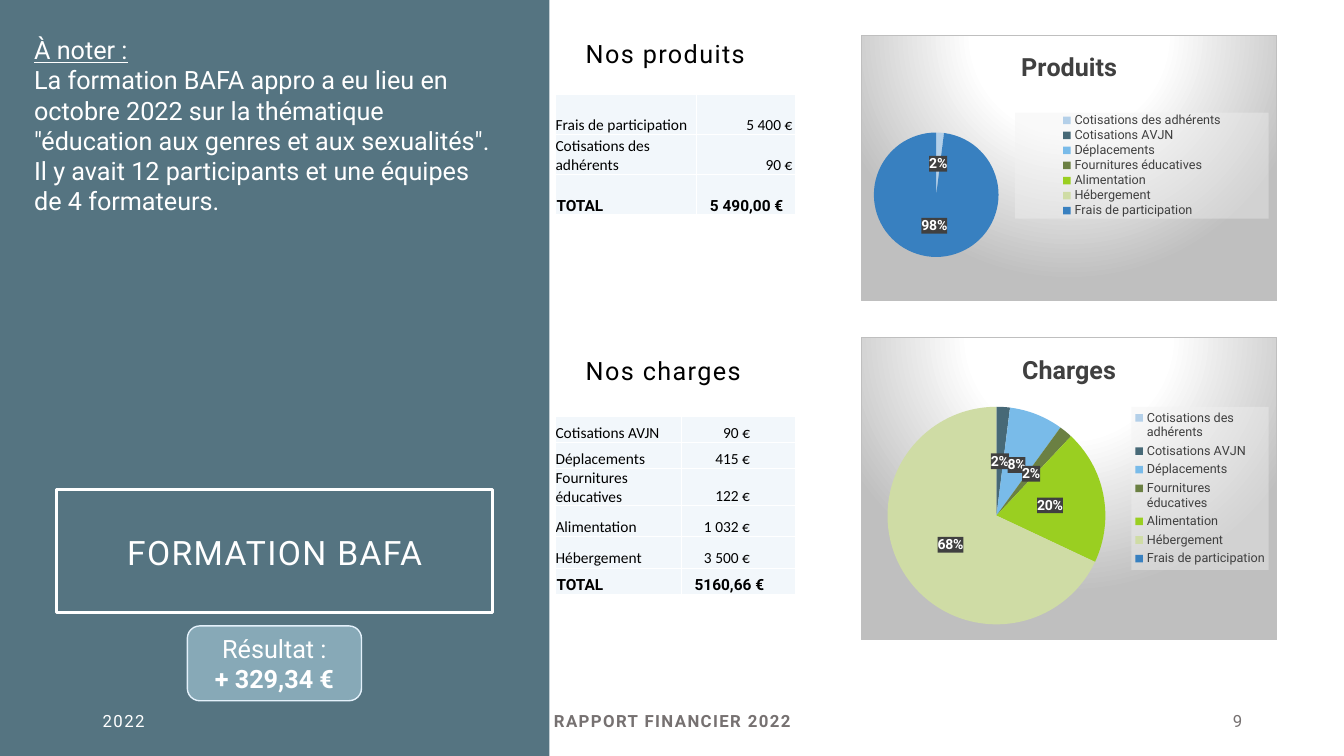
from lxml import etree
from pptx import Presentation
from pptx import util as u
from pptx.chart.data import CategoryChartData
from pptx.dml.color import RGBColor
from pptx.enum import chart as ch, shapes, text
from pptx.oxml import parse_xml
from pptx.oxml.ns import nsdecls, qn

WHITE = RGBColor(0xFF, 0xFF, 0xFF)
BLACK = RGBColor(0, 0, 0)
DARK = RGBColor(0x40, 0x40, 0x40)
GREY = RGBColor(0x76, 0x71, 0x71)
SLATE = RGBColor(0x47, 0x69, 0x77)
MIST = RGBColor(0x87, 0xA9, 0xB7)
PALE = RGBColor(0xE4, 0xF1, 0xFB)
CELL = RGBColor(0xF2, 0xF7, 0xFB)
SLICES = [RGBColor.from_string(c) for c in (
    "B4D0E9", "476977", "79BBE9", "6B8043", "9ACF21", "CFDCA5", "3880C0")]
CATS = ["Cotisations des adhérents", "Cotisations AVJN", "Déplacements",
        "Fournitures éducatives", "Alimentation", "Hébergement",
        "Frais de participation"]
LEFT, MID, RIGHT = text.PP_ALIGN.LEFT, text.PP_ALIGN.CENTER, text.PP_ALIGN.RIGHT
CARD = """<c:spPr %s><a:gradFill><a:gsLst>
<a:gs pos="0"><a:srgbClr val="FFFFFF"/></a:gs>
<a:gs pos="39000"><a:srgbClr val="FFFFFF"/></a:gs>
<a:gs pos="100000"><a:srgbClr val="BFBFBF"/></a:gs></a:gsLst>
<a:path path="circle"><a:fillToRect l="50000" t="-80000" r="50000" b="180000"/></a:path>
</a:gradFill><a:ln w="9525"><a:solidFill><a:srgbClr val="BFBFBF"/></a:solidFill></a:ln>
</c:spPr>""" % nsdecls("c", "a")


def part(box, x, y, w, h):
    return (box[0] + x * box[2], box[1] + y * box[3], w * box[2], h * box[3])


def size(box):
    return [u.Inches(v) for v in box]


def style(font, pts, color, bold=False, face="Roboto"):
    font.size, font.name, font.bold = u.Pt(pts), face, bold
    font.color.rgb = color


def write(par, words, pts, color, bold=False, face="Roboto", gap=0, line=False):
    run = par.add_run()
    run.text = words
    style(run.font, pts, color, bold, face)
    if line:
        run.font.underline = True
    if gap:
        run._r.get_or_add_rPr().set("spc", str(gap))


def label(slide, box, words, pts, color, align=LEFT, bold=False, space=1):
    frame = slide.shapes.add_textbox(*size(box)).text_frame
    frame.word_wrap = True
    frame.vertical_anchor = text.MSO_ANCHOR.MIDDLE
    par = frame.paragraphs[0]
    par.alignment, par.line_spacing = align, space
    write(par, words, pts, color, bold, gap=100)


def block(slide, kind, box, fill=None, line=None, width=1):
    shape = slide.shapes.add_shape(kind, *size(box))
    shape.shadow.inherit = False
    if fill is None:
        shape.fill.background()
    else:
        shape.fill.solid()
        shape.fill.fore_color.rgb = fill
    if line is None:
        shape.line.fill.background()
    else:
        shape.line.color.rgb, shape.line.width = line, u.Pt(width)
    shape.text_frame.word_wrap = True
    shape.text_frame.vertical_anchor = text.MSO_ANCHOR.MIDDLE
    return shape


def fade(parent, share):
    color = next(parent.iter(qn("a:srgbClr")))
    etree.SubElement(color, qn("a:alpha")).set("val", str(share * 1000))


def panel(slide, box):
    rect = shapes.MSO_SHAPE.RECTANGLE
    back = block(slide, rect, box, SLATE)
    fade(back._element.spPr, 92)
    frame = back.text_frame
    frame.margin_top = u.Inches(3.55)
    par = frame.paragraphs[0]
    par.alignment, par.line_spacing = MID, 0.9
    write(par, "FORMATION BAFA", 24, WHITE, gap=100)
    block(slide, rect, part(box, 0.103, 0.647, 0.793, 0.163), line=WHITE, width=2.25)

    note = slide.shapes.add_textbox(*size(part(box, 0.044, 0.039, 0.87, 0.296))).text_frame
    note.word_wrap = True
    write(note.paragraphs[0], "À noter :", 18, WHITE, line=True)
    write(note.add_paragraph(), "La formation BAFA appro a eu lieu en octobre 2022 sur la "
          "thématique \"éducation aux genres et aux sexualités\". Il y avait 12 "
          "participants et une équipes de 4 formateurs.", 18, WHITE)

    badge = block(slide, shapes.MSO_SHAPE.ROUNDED_RECTANGLE,
                  part(box, 0.341, 0.828, 0.317, 0.099), MIST, PALE).text_frame
    first, last = badge.paragraphs[0], badge.add_paragraph()
    first.alignment = last.alignment = MID
    write(first, "Résultat :", 18, WHITE)
    write(last, "+ 329,34 €", 18, WHITE, True)


def border(cell):
    props = cell._tc.get_or_add_tcPr()
    for i, side in enumerate(("lnL", "lnR", "lnT", "lnB")):
        props.insert(i, parse_xml(
            '<a:%s %s w="12700"><a:solidFill><a:srgbClr val="FFFFFF"/></a:solidFill></a:%s>'
            % (side, nsdecls("a"), side)))


def ledger(slide, box, rows, cols, highs, pads):
    table = slide.shapes.add_table(len(rows), 2, *size(box)).table
    for col, wide in zip(table.columns, cols):
        col.width = u.Inches(wide)
    for r, (row, high) in enumerate(zip(rows, highs)):
        table.rows[r].height = u.Inches(high)
        total = r == len(rows) - 1
        for c, words in enumerate(row):
            cell = table.cell(r, c)
            cell.fill.solid()
            cell.fill.fore_color.rgb = CELL
            border(cell)
            cell.vertical_anchor = text.MSO_ANCHOR.BOTTOM
            cell.margin_top = cell.margin_bottom = 0
            cell.margin_left = u.Inches(0.01 if total else 0)
            cell.margin_right = u.Inches(pads[total] if c else 0)
            par = cell.text_frame.paragraphs[0]
            par.alignment = RIGHT if c else LEFT
            write(par, words, 11, BLACK, total, "Roboto" if total else "Calibri")


def layout(x, y, w=None, h=None, inner=False):
    tags = '<c:layoutTarget val="inner"/>' if inner else ""
    tags += '<c:xMode val="edge"/><c:yMode val="edge"/>'
    for name, val in zip("xywh", (x, y, w, h)):
        if val is not None:
            tags += '<c:%s val="%s"/>' % (name, val)
    return parse_xml('<c:layout %s><c:manualLayout>%s</c:manualLayout></c:layout>'
                     % (nsdecls("c"), tags))


def tint(color, share):
    return parse_xml(
        '<c:spPr %s><a:solidFill><a:srgbClr val="%s"><a:alpha val="%d"/></a:srgbClr>'
        '</a:solidFill></c:spPr>' % (nsdecls("c", "a"), color, share * 1000))


def pie(slide, box, name, vals, plot, key):
    data = CategoryChartData()
    data.categories = CATS
    data.add_series("Series 1", vals)
    chart = slide.shapes.add_chart(ch.XL_CHART_TYPE.PIE, *size(box), data).chart
    style(chart.font, 10, BLACK)
    chart._chartSpace.chart.addnext(parse_xml(CARD))
    chart.has_title = True
    write(chart.chart_title.text_frame.paragraphs[0], name, 18, DARK, True)
    chart.chart_title._element.find(qn("c:tx")).addnext(layout(0.37, 0.06))

    area = chart._chartSpace.chart.plotArea
    for old in area.findall(qn("c:layout")):
        area.remove(old)
    area.insert(0, layout(*plot, inner=True))

    chart.has_legend = True
    legend = chart.legend
    legend.position = ch.XL_LEGEND_POSITION.RIGHT
    legend.include_in_layout = False
    style(legend.font, 9, DARK)
    for old in legend._element.findall(qn("c:layout")):
        legend._element.remove(old)
    legend._element.find(qn("c:legendPos")).addnext(layout(*key))
    legend._element.find(qn("c:txPr")).addprevious(tint("F2F2F2", 39))

    pies = chart.plots[0]
    pies.vary_by_categories = True
    for i, color in enumerate(SLICES):
        fill = pies.series[0].points[i].format.fill
        fill.solid()
        fill.fore_color.rgb = color
    pies.has_data_labels = True
    marks = pies.data_labels
    marks.show_percentage, marks.show_value = True, False
    marks.number_format, marks.number_format_is_linked = "0%", False
    marks.position = ch.XL_LABEL_POSITION.CENTER
    style(marks.font, 10, WHITE, True)
    marks._element.find(qn("c:txPr")).addprevious(tint("404040", 90))


def section(slide, box, head, table, graph, top):
    label(slide, part(box, 0.028, 0, 0.895, 0.16), head, 18, BLACK, space=2)
    ledger(slide, part(box, 0, 0.276, 0.332, 0.5), *table)
    pie(slide, part(box, 0.423, top, 0.577, 1 - top), *graph)


def footer(slide, box):
    label(slide, part(box, 0, 0, 0.26, 1), "2022", 12, WHITE)
    label(slide, part(box, 0.304, 0, 0.392, 1), "RAPPORT FINANCIER 2022", 12, GREY, MID, True)
    label(slide, part(box, 0.74, 0, 0.26, 1), "9", 12, GREY, RIGHT)


def main():
    deck = Presentation()
    deck.slide_width, deck.slide_height = u.Inches(13.33), u.Inches(7.5)
    slide = deck.slides.add_slide(deck.slide_layouts[6])
    panel(slide, (0, 0, 5.45, 7.5))
    section(slide, (5.51, 0.15, 7.16, 2.84), "Nos produits",
            ([("Frais de participation", "5 400 €"), ("Cotisations des adhérents", "90 €"),
              ("TOTAL", "5 490,00 €")], (1.4, 0.98), [0.4] * 3, (0.03, 0.12)),
            ("Produits", [2] + [None] * 5 + [98],
             (0.03, 0.36, 0.3, 0.48), (0.37, 0.29, 0.61, 0.4)), 0.07)
    section(slide, (5.51, 3.28, 7.16, 3.07), "Nos charges",
            ([("Cotisations AVJN", "90 €"), ("Déplacements", "415 €"),
              ("Fournitures éducatives", "122 €"), ("Alimentation", "1 032 €"),
              ("Hébergement", "3 500 €"), ("TOTAL", "5160,66 €")],
             (1.25, 1.13), (0.26, 0.26, 0.37, 0.31, 0.31, 0.26), (0.45, 0.31)),
            ("Charges", [None, 2, 8, 2, 20, 68, None],
             (0.06, 0.23, 0.53, 0.72), (0.65, 0.23, 0.33, 0.54)), 0.02)
    footer(slide, (0.92, 6.95, 11.5, 0.4))
    deck.save("out.pptx")


if __name__ == "__main__":
    main()
